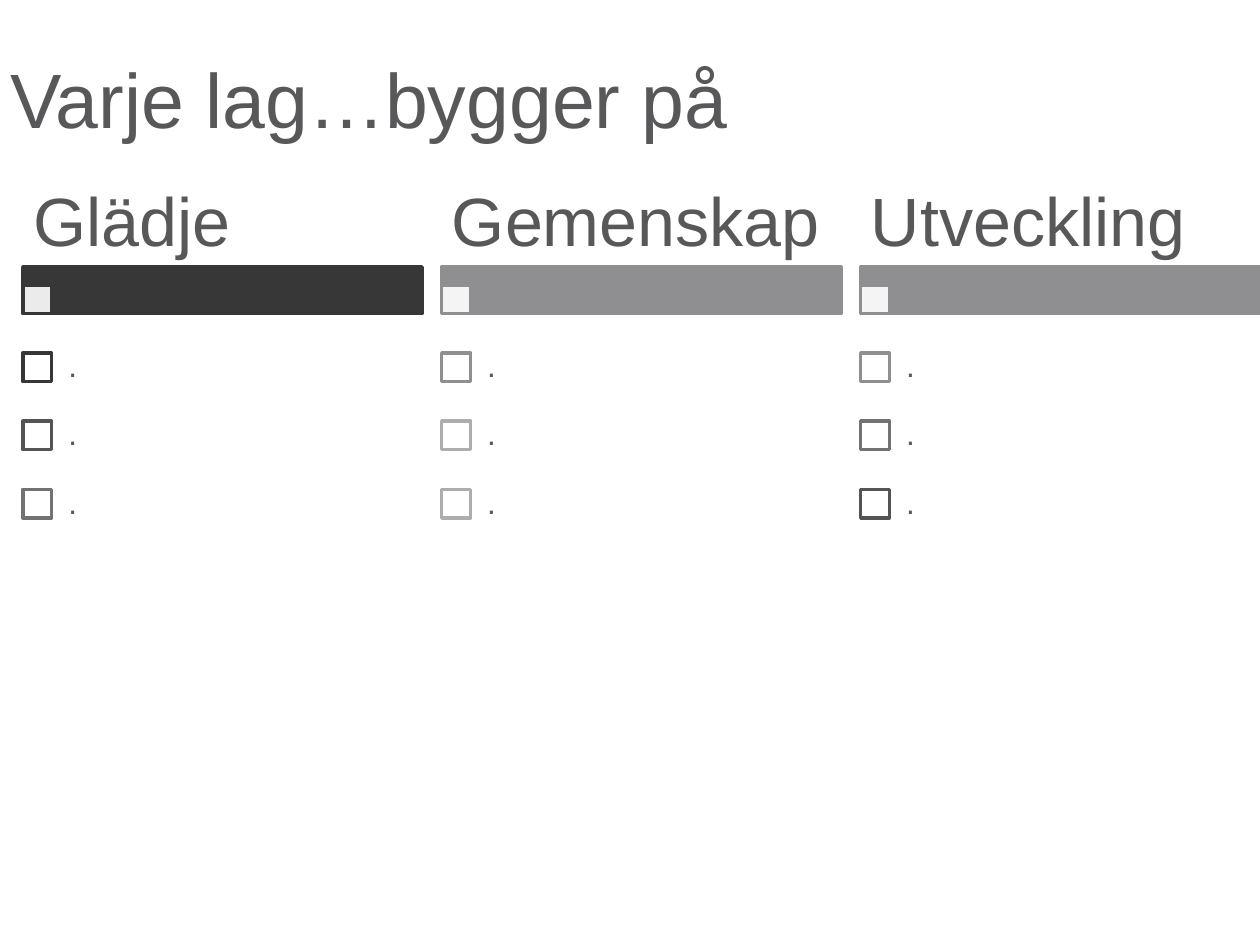
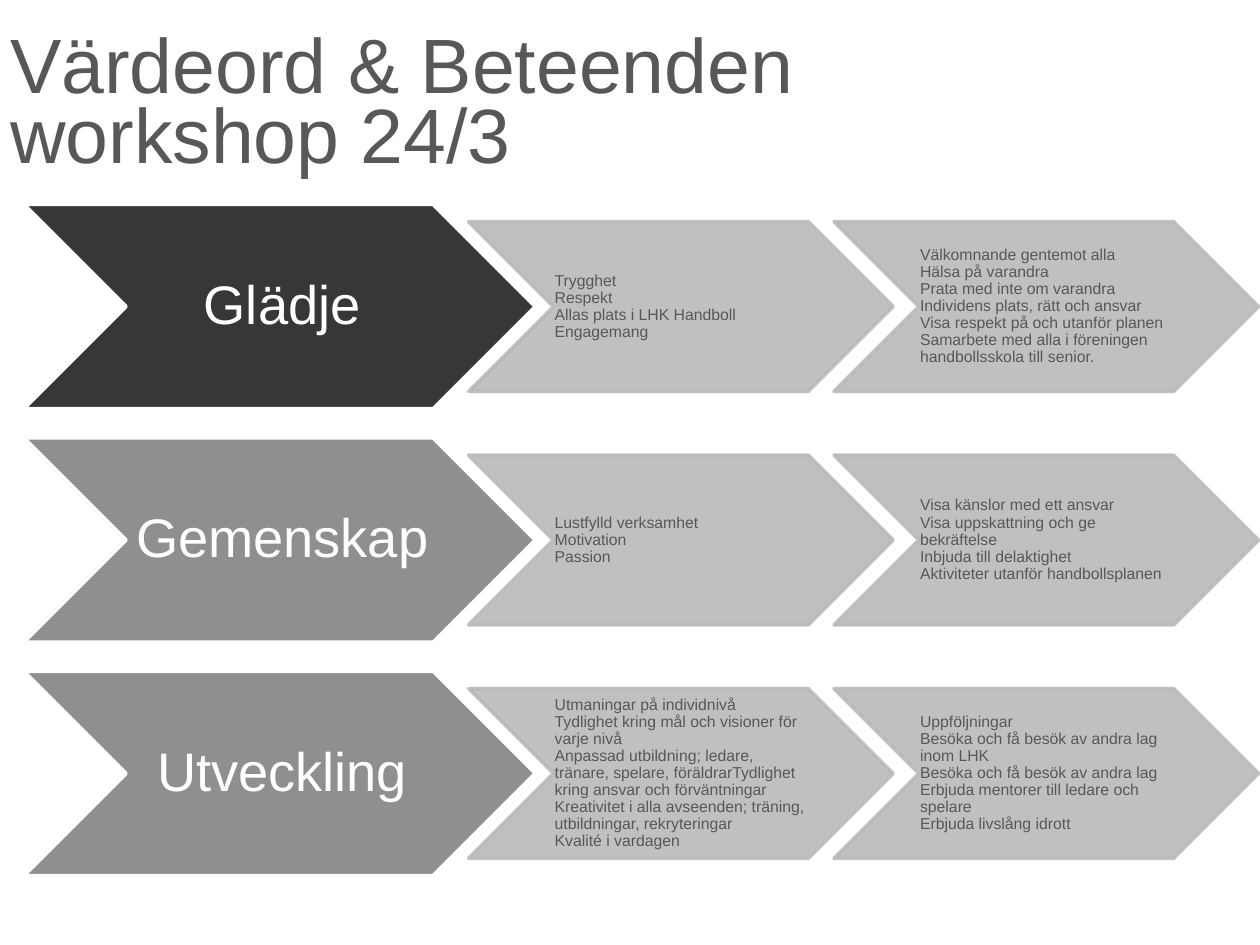
from dataclasses import dataclass

from lxml import etree
from pptx import Presentation
from pptx.dml.color import RGBColor
from pptx.enum import shapes, text
from pptx.oxml import ns
from pptx.util import Pt


@dataclass(frozen=True)
class Theme:
    font: str = "Arial"
    ink: str = "58585A"
    white: str = "FFFFFF"
    dark: str = "373738"
    charcoal: str = "545456"
    slate: str = "727274"
    grey: str = "8F8F91"
    silver: str = "ADADAE"
    pale: str = "BABABA"
    title_size: int = 44
    heading_size: int = 39
    value_size: int = 31
    point_size: int = 18
    detail_size: int = 9
    outline: int = 2


THEME = Theme()


def add_block(slide, preset, place, fill, line, fill_alpha=100, line_alpha=100):
    """Draw a preset shape; place is left, top, width, height in points."""
    block = slide.shapes.add_shape(preset, *map(Pt, place))
    block.shadow.inherit = False
    block.fill.solid()
    block.fill.fore_color.rgb = RGBColor.from_string(fill)
    block.line.color.rgb = RGBColor.from_string(line)
    block.line.width = Pt(THEME.outline)
    fill_color, line_color = block._element.spPr.iter(ns.qn("a:srgbClr"))
    for color, alpha in ((fill_color, fill_alpha), (line_color, line_alpha)):
        if alpha < 100:
            etree.SubElement(color, ns.qn("a:alpha")).set("val", str(alpha * 1000))


def write(holder, place, words, size, insets, color=THEME.ink, spacing=0.9,
          align=text.PP_ALIGN.LEFT):
    """Place a text holder and fill it with one formatted paragraph."""
    holder.left, holder.top, holder.width, holder.height = map(Pt, place)
    frame = holder.text_frame
    frame.word_wrap = True
    frame.auto_size = text.MSO_AUTO_SIZE.NONE
    frame.vertical_anchor = text.MSO_ANCHOR.MIDDLE
    (frame.margin_left, frame.margin_top,
     frame.margin_right, frame.margin_bottom) = map(Pt, insets)
    paragraph = frame.paragraphs[0]
    paragraph.text = words
    paragraph.alignment = align
    paragraph.line_spacing = spacing
    for run in paragraph.runs:
        run.font.name = THEME.font
        run.font.size = Pt(size)
        run.font.color.rgb = RGBColor.from_string(color)


deck = Presentation()
deck.slide_width, deck.slide_height = Pt(720), Pt(540)
slides = []
for title in ("Varje lag…bygger på", "Värdeord & Beteenden workshop 24/3"):
    slide = deck.slides.add_slide(deck.slide_layouts[5])
    write(slide.shapes.title, (0, 18.7, 590.4, 85.7), title, THEME.title_size,
          (5.8, 0, 5.8, 0), spacing=0.75)
    slides.append(slide)
foundations, workshop = slides

# Slide 1: three columns, each a heading, a band and three check boxes
RECT = shapes.MSO_SHAPE.RECTANGLE
COLUMN_LEFT, COLUMN_PITCH, COLUMN_WIDTH = 13, 239.4, 228.2
CHECK_SIZE, CHECK_TOP, CHECK_PITCH = 16.4, 201.6, 39
columns = (
    ("Glädje", THEME.dark, (THEME.dark, THEME.charcoal, THEME.slate)),
    ("Gemenskap", THEME.grey, (THEME.grey, THEME.silver, THEME.silver)),
    ("Utveckling", THEME.grey, (THEME.grey, THEME.slate, THEME.charcoal)),
)
for column, (value, band_color, check_colors) in enumerate(columns):
    left = COLUMN_LEFT + column * COLUMN_PITCH
    add_block(foundations, RECT, (left, 152.6, COLUMN_WIDTH, 26.6),
              band_color, band_color)
    add_block(foundations, RECT, (left, 162.8, CHECK_SIZE, CHECK_SIZE),
              THEME.white, band_color, fill_alpha=90)
    heading = foundations.shapes.add_textbox(0, 0, 0, 0)
    write(heading, (left, 104.4, COLUMN_WIDTH, 48.2), value,
          THEME.heading_size, (5.9, 3.9, 5.9, 3.9))
    for row, check_color in enumerate(check_colors):
        top = CHECK_TOP + row * CHECK_PITCH
        add_block(foundations, RECT, (left, top, CHECK_SIZE, CHECK_SIZE),
                  THEME.white, check_color)
        point = foundations.shapes.add_textbox(0, 0, 0, 0)
        write(point, (left + 16, top - 11.2, 212, CHECK_PITCH), ".",
              THEME.point_size, (10, 10, 10, 10))

# Slide 2: each value leads to its key words and then to its behaviours
CHEVRON = shapes.MSO_SHAPE.CHEVRON
ROW_TOP, ROW_PITCH = 116.8, 133.4
VALUE_LEFT, VALUE_WIDTH, VALUE_HEIGHT = 13.7, 292.2, 116.8
DETAIL_LEFT, DETAIL_PITCH, DETAIL_WIDTH, DETAIL_HEIGHT = 267.8, 208.8, 242.6, 97
value_rows = (
    ("Glädje", THEME.dark, (
        "Trygghet\nRespekt\nAllas plats i LHK Handboll\nEngagemang",
        "Välkomnande gentemot alla\nHälsa på varandra\n"
        "Prata med inte om varandra\nIndividens plats, rätt och ansvar\n"
        "Visa respekt på och utanför planen\n"
        "Samarbete med alla i föreningen handbollsskola till senior.")),
    ("Gemenskap", THEME.grey, (
        "Lustfylld verksamhet\nMotivation\nPassion",
        "Visa känslor med ett ansvar\nVisa uppskattning och ge bekräftelse\n"
        "Inbjuda till delaktighet\nAktiviteter utanför handbollsplanen")),
    ("Utveckling", THEME.grey, (
        "Utmaningar på individnivå\n"
        "Tydlighet kring mål och visioner för varje nivå\n"
        "Anpassad utbildning; ledare, tränare, spelare, föräldrarTydlighet "
        "kring ansvar och förväntningar\n"
        "Kreativitet i alla avseenden; träning, utbildningar, rekryteringar\n"
        "Kvalité i vardagen",
        "Uppföljningar\nBesöka och få besök av andra lag inom LHK\n"
        "Besöka och få besök av andra lag\n"
        "Erbjuda mentorer till ledare och spelare\nErbjuda livslång idrott")),
)
for row, (value, value_color, details) in enumerate(value_rows):
    top = ROW_TOP + row * ROW_PITCH
    add_block(workshop, CHEVRON, (VALUE_LEFT, top, VALUE_WIDTH, VALUE_HEIGHT),
              value_color, THEME.white)
    label = workshop.shapes.add_textbox(0, 0, 0, 0)
    write(label, (VALUE_LEFT + VALUE_HEIGHT / 2, top,
                  VALUE_WIDTH - VALUE_HEIGHT, VALUE_HEIGHT),
          value, THEME.value_size, (2.9, 1.4, 0, 1.4), THEME.white,
          align=text.PP_ALIGN.CENTER)
    detail_top = top + (VALUE_HEIGHT - DETAIL_HEIGHT) / 2
    for step, detail in enumerate(details):
        left = DETAIL_LEFT + step * DETAIL_PITCH
        add_block(workshop, CHEVRON, (left, detail_top, DETAIL_WIDTH, DETAIL_HEIGHT),
                  THEME.pale, THEME.pale, fill_alpha=90, line_alpha=90)
        behaviour = workshop.shapes.add_textbox(0, 0, 0, 0)
        write(behaviour, (left + DETAIL_HEIGHT / 2, detail_top,
                          DETAIL_WIDTH - DETAIL_HEIGHT, DETAIL_HEIGHT),
              detail, THEME.detail_size, (0.7, 0.7, 0, 0.7))

deck.save("out.pptx")
